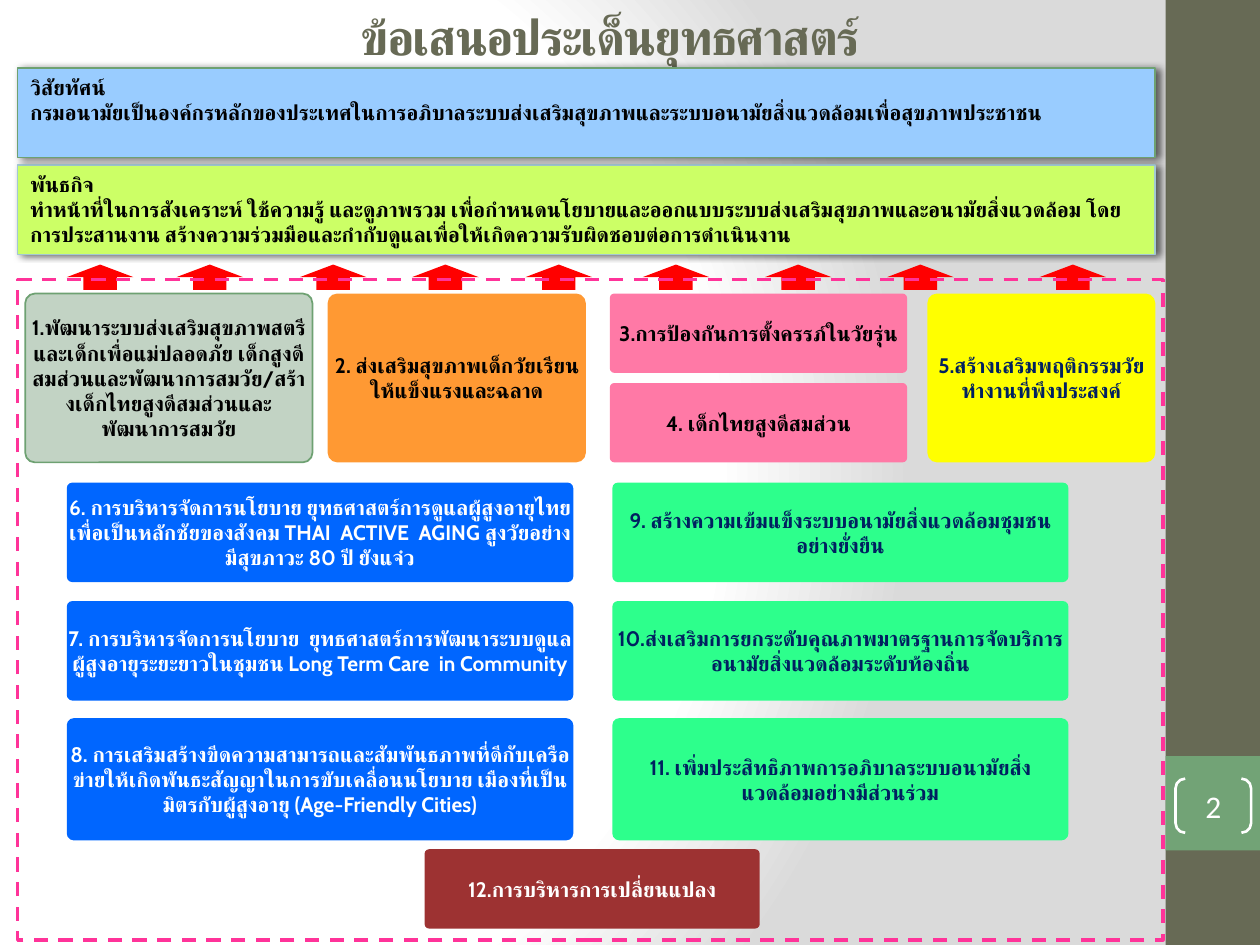
import dataclasses

import lxml.etree
import pptx
import pptx.dml.color
import pptx.enum.shapes
import pptx.enum.text
import pptx.oxml
import pptx.oxml.ns
import pptx.util

SHAPE = pptx.enum.shapes.MSO_SHAPE
ALIGN = pptx.enum.text.PP_ALIGN
ANCHOR = pptx.enum.text.MSO_ANCHOR
qn = pptx.oxml.ns.qn
NS = pptx.oxml.ns.nsdecls("a")

WIDTH, HEIGHT = pptx.util.Inches(10), pptx.util.Inches(7.5)
COL, ROW = WIDTH / 100, HEIGHT / 75


@dataclasses.dataclass(frozen=True)
class Theme:
    font: str = "Cabin"
    number_font: str = "Calibri"
    title_size: int = 28
    number_size: int = 18
    body_size: int = 12
    olive: str = "676A55"
    green: str = "72A376"
    edge: str = "6EA172"
    black: str = "000000"
    white: str = "FFFFFF"
    navy: str = "002060"
    sky: str = "99CCFF"
    lime: str = "CCFF66"
    lime_edge: str = "A3C9D3"
    sage: str = "C2D3C4"
    orange: str = "FF9933"
    pink: str = "FF79A6"
    yellow: str = "FFFF00"
    blue: str = "0066FF"
    mint: str = "2DFF8C"
    maroon: str = "9D3232"
    red: str = "FF0000"
    magenta: str = "FF3399"
    backdrop: str = "DADADA"


T = Theme()


def rgb(value):
    return pptx.dml.color.RGBColor.from_string(value)


def grid(col, row, cols, rows):
    """Turn grid columns and rows into left, top, width and height."""
    return [round(n) for n in (col * COL, row * ROW, cols * COL, rows * ROW)]


def write(sp, *lines, size=T.body_size, font=T.font, color=T.black, bold=True,
          align=ALIGN.CENTER, anchor=ANCHOR.MIDDLE, inset=0, spacing=None):
    tf = sp.text_frame
    tf.word_wrap = True
    tf.auto_size = pptx.enum.text.MSO_AUTO_SIZE.NONE
    tf.vertical_anchor = anchor
    if inset is not None:
        tf.margin_left = tf.margin_right = tf.margin_top = tf.margin_bottom = inset
    for i, line in enumerate(lines):
        p = tf.paragraphs[0] if i == 0 else tf.add_paragraph()
        p.alignment = align
        r = p.add_run()
        r.text = line
        r.font.size = pptx.util.Pt(size)
        r.font.name = font
        r.font.bold = bold
        r.font.color.rgb = rgb(color)
        props = r.font._element if hasattr(r.font, "_element") else r._r.get_or_add_rPr()
        # Thai letters take the complex-script font
        props.find(qn("a:latin")).addnext(
            pptx.oxml.parse_xml(f'<a:cs {NS} typeface="{font}"/>'))
        if spacing is not None:
            props.set("spc", str(spacing))


def add_box(s, kind, place, fill=None, line=None, line_width=1, adj=None):
    sp = s.shapes.add_shape(kind, *grid(*place))
    sp.shadow.inherit = False
    if fill:
        sp.fill.solid()
        sp.fill.fore_color.rgb = rgb(fill)
    else:
        sp.fill.background()
    if line:
        sp.line.color.rgb = rgb(line)
        sp.line.width = pptx.util.Pt(line_width)
    else:
        sp.line.fill.background()
    if adj is not None:
        sp.adjustments[0] = adj
    return sp


def add_card(s, place, text, fill, color, line=None):
    sp = add_box(s, SHAPE.ROUNDED_RECTANGLE, place, fill, line, adj=0.057)
    write(sp, text, color=color)


def add_banner(s, row, fill, line, *lines):
    sp = add_box(s, SHAPE.RECTANGLE, (1.4, row, 90.3, 7.1), fill, line)
    shadow = lxml.etree.SubElement(
        sp.element.spPr.find(qn("a:effectLst")), qn("a:outerShdw"),
        blurRad=str(pptx.util.Pt(4)), dist=str(pptx.util.Pt(2)), dir="0")
    shade = lxml.etree.SubElement(shadow, qn("a:srgbClr"), val=T.black)
    lxml.etree.SubElement(shade, qn("a:alpha"), val="60000")
    write(sp, *lines, align=ALIGN.LEFT, anchor=ANCHOR.TOP, inset=None)


def set_background(s):
    s.background.fill.gradient()
    old = s.element.find(".//" + qn("a:gradFill"))
    stops = "".join(
        f'<a:gs pos="{pos}000"><a:srgbClr val="{color}"/></a:gs>'
        for pos, color in ((0, T.white), (75, T.white), (100, T.backdrop)))
    old.getparent().replace(old, pptx.oxml.parse_xml(
        f'<a:gradFill {NS} rotWithShape="1"><a:gsLst>{stops}</a:gsLst>'
        '<a:path path="circle"><a:fillToRect l="20000" t="50000" r="100000" b="50000"/>'
        '</a:path></a:gradFill>'))


def add_title(s, text):
    sp = s.shapes.title
    sp.left, sp.top, sp.width, sp.height = grid(6.8, 0.5, 83.3, 4.7)
    write(sp, text, size=T.title_size, color=T.olive, inset=None, spacing=-100)


def add_side_panel(s, number):
    add_box(s, SHAPE.RECTANGLE, (92.5, 0, 7.5, 75), T.olive)
    add_box(s, SHAPE.RECTANGLE, (92.5, 60, 7.5, 7.5), T.green)
    sp = add_box(s, SHAPE.DOUBLE_BRACKET, (93.3, 61.8, 6, 4.3),
                 line=T.white, line_width=1.5, adj=0.179)
    write(sp, number, size=T.number_size, font=T.number_font, color=T.white, bold=False)


def add_strategies(s):
    top, tall, short = 23.3, 13.4, 6.3
    add_card(s, (2, top, 22.8, tall),
             "1.พัฒนาระบบส่งเสริมสุขภาพสตรีและเด็กเพื่อแม่ปลอดภัย เด็กสูงดีสมส่วนและพัฒนาการสมวัย/สร้างเด็กไทยสูงดีสมส่วนและพัฒนาการสมวัย",
             T.sage, T.black, T.edge)
    add_card(s, (26, top, 20.5, tall),
             "2. ส่งเสริมสุขภาพเด็กวัยเรียนให้แข็งแรงและฉลาด", T.orange, T.black)
    for row, text in ((top, "3.การป้องกันการตั้งครรภ์ในวัยรุ่น"),
                      (top + tall - short, "4. เด็กไทยสูงดีสมส่วน")):
        add_card(s, (48.4, row, 23.6, short), text, T.pink, T.black)
    add_card(s, (73.6, top, 18.1, tall),
             "5.สร้างเสริมพฤติกรรมวัยทำงานที่พึงประสงค์", T.yellow, T.navy)

    rows = ((38.3, 7.9), (47.7, 7.9), (57, 9.7))
    elderly = (
        "6. การบริหารจัดการนโยบาย ยุทธศาสตร์การดูแลผู้สูงอายุไทยเพื่อเป็นหลักชัยของสังคม THAI  ACTIVE  AGING สูงวัยอย่างมีสุขภาวะ 80 ปี ยังแจ๋ว",
        "7. การบริหารจัดการนโยบาย  ยุทธศาสตร์การพัฒนาระบบดูแลผู้สูงอายุระยะยาวในชุมชน Long Term Care  in Community",
        "8. การเสริมสร้างขีดความสามารถและสัมพันธภาพที่ดีกับเครือข่ายให้เกิดพันธะสัญญาในการขับเคลื่อนนโยบาย เมืองที่เป็นมิตรกับผู้สูงอายุ (Age-Friendly Cities)",
    )
    environment = (
        "9. สร้างความเข้มแข็งระบบอนามัยสิ่งแวดล้อมชุมชนอย่างยั่งยืน",
        "10.ส่งเสริมการยกระดับคุณภาพมาตรฐานการจัดบริการอนามัยสิ่งแวดล้อมระดับท้องถิ่น",
        "11. เพิ่มประสิทธิภาพการอภิบาลระบบอนามัยสิ่งแวดล้อมอย่างมีส่วนร่วม",
    )
    for col, cols, texts, fill, color in ((5.3, 40.2, elderly, T.blue, T.white),
                                          (48.6, 36.2, environment, T.mint, T.navy)):
        for (row, height), text in zip(rows, texts):
            add_card(s, (col, row, cols, height), text, fill, color)
    add_card(s, (33.7, 67.4, 26.6, short), "12.การบริหารการเปลี่ยนแปลง", T.maroon, T.white)


def main():
    prs = pptx.Presentation()
    prs.slide_width, prs.slide_height = WIDTH, HEIGHT
    s = prs.slides.add_slide(prs.slide_layouts[5])
    set_background(s)
    add_title(s, "ข้อเสนอประเด็นยุทธศาสตร์")
    add_side_panel(s, "2")
    add_strategies(s)
    add_banner(s, 13.1, T.lime, T.lime_edge, "พันธกิจ",
               "ทำหน้าที่ในการสังเคราะห์ ใช้ความรู้ และดูภาพรวม เพื่อกำหนดนโยบายและออกแบบระบบส่งเสริมสุขภาพและอนามัยสิ่งแวดล้อม โดยการประสานงาน สร้างความร่วมมือและกำกับดูแลเพื่อให้เกิดความรับผิดชอบต่อการดำเนินงาน")
    add_banner(s, 5.4, T.sky, T.edge, "วิสัยทัศน์",
               "กรมอนามัยเป็นองค์กรหลักของประเทศในการอภิบาลระบบส่งเสริมสุขภาพและระบบอนามัยสิ่งแวดล้อมเพื่อสุขภาพประชาชน")
    for col in (5.3, 14, 23.8, 32.7, 41.7, 51, 60.7, 70.4, 82.5):
        add_box(s, SHAPE.UP_ARROW, (col, 21, 5.3, 2), T.red)
    frame = add_box(s, SHAPE.RECTANGLE, (1.4, 22.2, 90.9, 52.4),
                    line=T.magenta, line_width=2)
    frame.line.dash_style = pptx.enum.dml.MSO_LINE.DASH
    prs.save("out.pptx")


if __name__ == "__main__":
    main()
